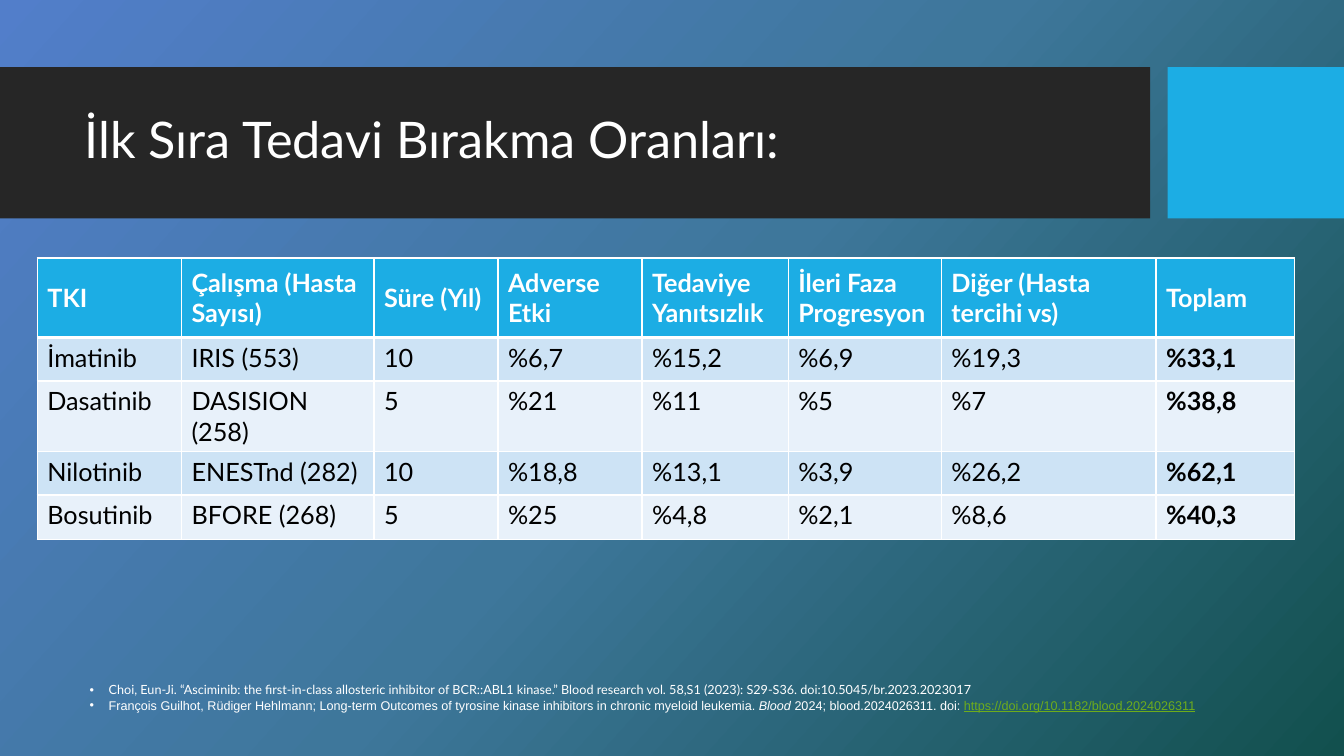
from copy import deepcopy

from lxml.etree import SubElement
from pptx import Presentation
from pptx.dml.color import RGBColor as Color
from pptx.enum.shapes import MSO_SHAPE as Shape
from pptx.enum.text import MSO_ANCHOR as Anchor, PP_ALIGN as Align
from pptx.oxml.ns import qn
from pptx.util import Inches, Pt

WHITE, BLACK, DARK, ACCENT, LINK = "FFFFFF", "000000", "262626", "1CADE4", "6EAC1C"
BANDS = ("CDE3F5", "E8F1FA")
BACKGROUND = ((0, "527ECA"), (50, "3E779B"), (100, "12504E"))
COLUMNS, ROWS = 160, 90

TITLE = "İlk Sıra Tedavi Bırakma Oranları:"
DISCONTINUATION = (
    ("TKI", "Çalışma (Hasta Sayısı)", "Süre (Yıl)", "Adverse Etki",
     "Tedaviye Yanıtsızlık", "İleri Faza Progresyon",
     "Diğer (Hasta tercihi vs)", "Toplam"),
    ("İmatinib", "IRIS (553)", "10", "%6,7", "%15,2", "%6,9", "%19,3", "%33,1"),
    ("Dasatinib", "DASISION (258)", "5", "%21", "%11", "%5", "%7", "%38,8"),
    ("Nilotinib", "ENESTnd (282)", "10", "%18,8", "%13,1", "%3,9", "%26,2", "%62,1"),
    ("Bosutinib", "BFORE (268)", "5", "%25", "%4,8", "%2,1", "%8,6", "%40,3"),
)
TABLE_COLUMNS = (17.16, 22.92, 14.76, 17.16, 17.4, 18.24, 25.56, 16.44)
TABLE_ROWS = (9.48, 5.16, 5.16, 5.16, 5.28)
REFERENCES = (
    (("Choi, Eun-Ji. “Asciminib: the first-in-class allosteric inhibitor of "
      "BCR::ABL1 kinase.” Blood research vol. 58,S1 (2023): S29-S36. "
      "doi:10.5045/br.2023.2023017", {}),),
    (("François Guilhot, Rüdiger Hehlmann; Long-term Outcomes of tyrosine kinase "
      "inhibitors in chronic myeloid leukemia. ", {"name": "Arial"}),
     ("Blood", {"name": "Arial", "italic": True}),
     (" 2024; blood.2024026311. doi: ", {"name": "Arial"}),
     ("https://doi.org/10.1182/blood.2024026311",
      {"name": "Arial", "color": LINK, "underline": True})),
)


def rgb(value):
    """Turn a hex string into a colour."""
    return Color.from_string(value)


def write(para, text, size=18, color=WHITE, name="Lato", **style):
    """Add a formatted span of text to a paragraph."""
    span = para.add_run()
    span.text = text
    span.font.size, span.font.name = Pt(size), name
    span.font.color.rgb = rgb(color)
    for key, value in style.items():
        setattr(span.font, key, value)


class Page:
    """Hold the deck, its grid and the current slide."""

    def __init__(self):
        """Open a wide deck with one title-only slide."""
        self.deck = Presentation()
        self.deck.slide_width, self.deck.slide_height = Inches(13.33), Inches(7.5)
        self.slide = self.deck.slides.add_slide(self.deck.slide_layouts[5])

    def across(self, columns):
        """Convert grid columns to a length."""
        return round(self.deck.slide_width * columns / COLUMNS)

    def down(self, rows):
        """Convert grid rows to a length."""
        return round(self.deck.slide_height * rows / ROWS)

    def frame(self, left, top, width, height):
        """Convert a grid area to four lengths."""
        return self.across(left), self.down(top), self.across(width), self.down(height)

    def background(self, stops, angle):
        """Fill the slide with a linear gradient."""
        fill = self.slide.background.fill
        fill.gradient()
        fill.gradient_angle = 360 - angle
        first = fill.gradient_stops[0]
        stop_list = self.slide.background._cSld.find(".//" + qn("a:gsLst"))
        stop_list.insert(1, deepcopy(stop_list[0]))
        for stop, (position, color) in zip(fill.gradient_stops, stops):
            stop.color.rgb = rgb(color)
            stop.position = position / 100

    def band(self, area, color):
        """Draw a plain rectangle."""
        box = self.slide.shapes.add_shape(Shape.RECTANGLE, *self.frame(*area))
        box.shadow.inherit = False
        box.fill.solid()
        box.fill.fore_color.rgb = rgb(color)
        box.line.fill.background()

    def title(self, area, text):
        """Place the title above the bands."""
        box = self.slide.shapes.title
        box.left, box.top, box.width, box.height = self.frame(*area)
        self.slide.shapes._spTree.append(box._element)
        box.text_frame.vertical_anchor = Anchor.MIDDLE
        para = box.text_frame.paragraphs[0]
        para.alignment, para.line_spacing = Align.LEFT, 0.9
        write(para, text, size=36)

    def bullets(self, area, items, size):
        """Add a bulleted list of mixed-format lines."""
        box = self.slide.shapes.add_textbox(*self.frame(*area))
        box.text_frame.word_wrap = True
        for index, spans in enumerate(items):
            para = box.text_frame.add_paragraph() if index else box.text_frame.paragraphs[0]
            props = para._p.get_or_add_pPr()
            props.set("marL", str(Inches(0.19)))
            props.set("indent", str(-Inches(0.19)))
            SubElement(props, qn("a:buFont")).set("typeface", "Arial")
            SubElement(props, qn("a:buChar")).set("char", "•")
            for text, style in spans:
                write(para, text, size=size, **style)

    def borders(self, cell, **weights):
        """Draw white borders of the given weights round a cell."""
        props = cell._tc.get_or_add_tcPr()
        for side in "LRTB":
            line = SubElement(props, qn("a:ln" + side))
            line.set("w", str(Pt(weights.get(side, 1))))
            paint = SubElement(line, qn("a:solidFill"))
            SubElement(paint, qn("a:srgbClr")).set("val", WHITE)

    def table(self, left, top, widths, heights, data):
        """Add a banded table with a bold header and last column."""
        area = self.frame(left, top, sum(widths), sum(heights))
        table = self.slide.shapes.add_table(len(data), len(widths), *area).table
        for column, width in zip(table.columns, widths):
            column.width = self.across(width)
        for row, height in zip(table.rows, heights):
            row.height = self.down(height)
        for r, values in enumerate(data):
            header = r == 0
            for c, text in enumerate(values):
                cell = table.cell(r, c)
                self.borders(cell, B=3 if header else 1, T=3 if r == 1 else 1)
                cell.fill.solid()
                cell.fill.fore_color.rgb = rgb(ACCENT if header else BANDS[(r - 1) % 2])
                cell.vertical_anchor = Anchor.MIDDLE if header else Anchor.TOP
                write(cell.text_frame.paragraphs[0], text,
                      color=WHITE if header else BLACK,
                      bold=header or c == len(values) - 1)


def main():
    """Build and save the slide."""
    page = Page()
    page.background(BACKGROUND, 42)
    page.band((0, 8, 136.92, 18), DARK)
    page.band((139, 8, 21, 18), ACCENT)
    page.title((8.88, 9.84, 126.12, 14.16), TITLE)
    page.bullets((9.48, 80.64, 138, 4.8), REFERENCES, size=9)
    page.table(4.44, 30.72, TABLE_COLUMNS, TABLE_ROWS, DISCONTINUATION)
    page.deck.save("out.pptx")


if __name__ == "__main__":
    main()
